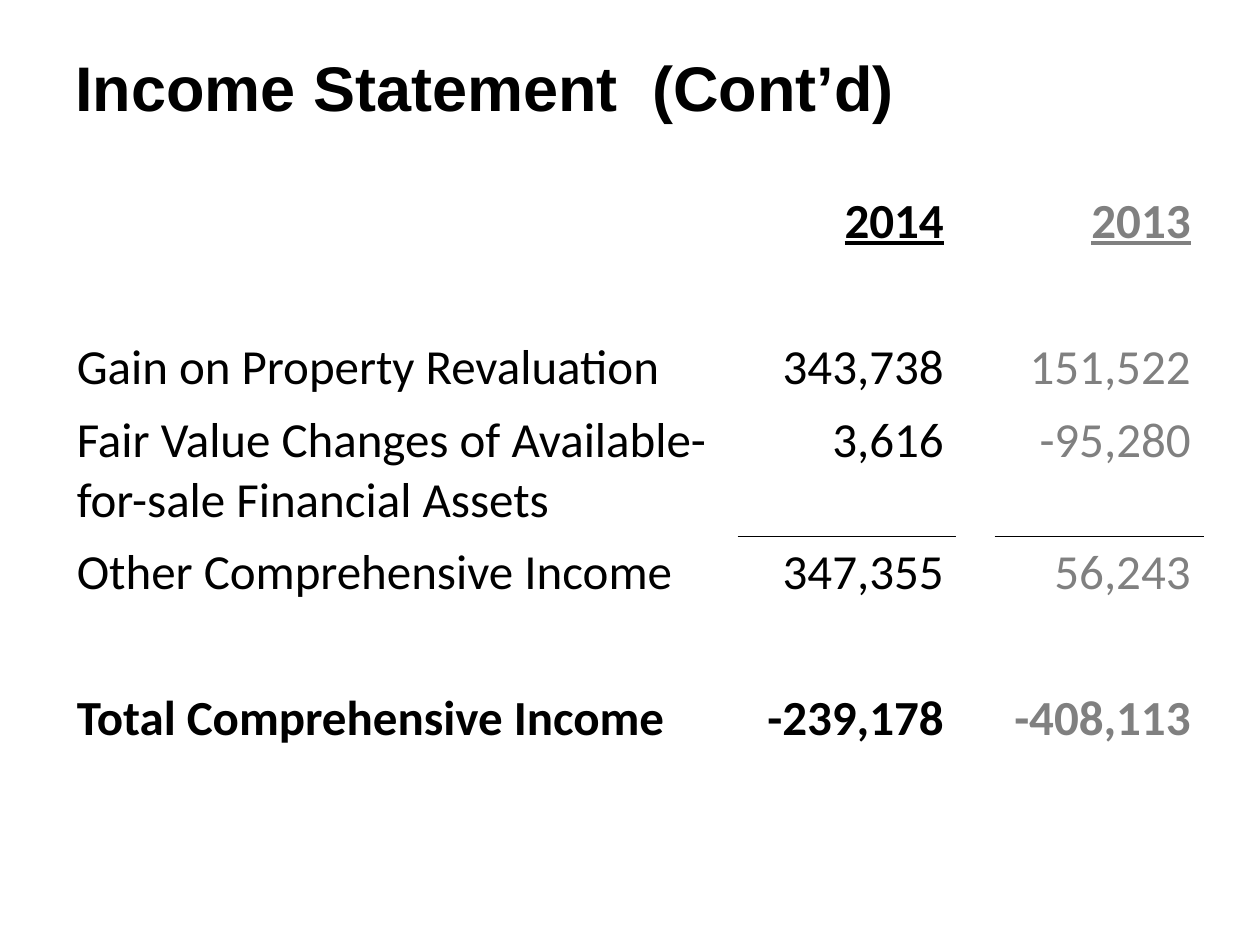
"""Build the continued income statement slide."""
import pptx
import pptx.util
import pptx.dml.color
import pptx.enum.text
import pptx.oxml
import pptx.oxml.ns

Inches = pptx.util.Inches
Pt = pptx.util.Pt

TITLE = "Income Statement  (Cont’d)"
ROWS = [
    ("", "2014", "", "2013"),
    ("", "", "", ""),
    ("Gain on Property Revaluation", "343,738", "", "151,522"),
    ("Fair Value Changes of Available-for-sale Financial Assets", "3,616", "", "-95,280"),
    ("Other Comprehensive Income", "347,355", "", "56,243"),
    ("", "", "", ""),
    ("Total Comprehensive Income", "-239,178", "", "-408,113"),
    ("", "", "", ""),
]
COLORS = {"ink": "000000", "past": "808080"}
WIDTHS = [5.35, 1.73, 0.31, 1.65]
HEIGHTS = [0.58, 0.58, 0.58, 1.05, 0.58, 0.58, 0.58, 0.4]
HEAD, LAST, TOTAL = 0, 3, 6
YEARS = (1, 3)


def style(para, face, size, color, bold):
    for run in para.runs:
        font = run.font
        font.name, font.size, font.bold = face, Pt(size), bold
        font.color.rgb = pptx.dml.color.RGBColor.from_string(COLORS[color])


def rule(cell, side):
    line = pptx.oxml.parse_xml(
        f'<a:{side} {pptx.oxml.ns.nsdecls("a")} w="{Pt(1)}"><a:solidFill>'
        f'<a:srgbClr val="{COLORS["ink"]}"/></a:solidFill></a:{side}>')
    cell._tc.get_or_add_tcPr().insert(0, line)


def add_title(slide):
    box = slide.shapes.add_textbox(Inches(0.5), Inches(0.29), Inches(9.5), Inches(0.79))
    frame = box.text_frame
    frame.word_wrap = True
    frame.vertical_anchor = pptx.enum.text.MSO_ANCHOR.MIDDLE
    frame.text = TITLE
    style(frame.paragraphs[0], "Arial", 36, "ink", True)


def add_sheet(slide):
    table = slide.shapes.add_table(
        len(ROWS), len(WIDTHS), Inches(0.51), Inches(1.47),
        Inches(sum(WIDTHS)), Inches(sum(HEIGHTS))).table
    table.first_row = table.horz_banding = False
    for col, width in zip(table.columns, WIDTHS):
        col.width = Inches(width)
    for row, height in zip(table.rows, HEIGHTS):
        row.height = Inches(height)
    for r, row in enumerate(ROWS):
        for c, text in enumerate(row):
            cell = table.cell(r, c)
            cell.fill.background()
            cell.text_frame.text = text
            para = cell.text_frame.paragraphs[0]
            style(para, "Calibri", 28, "past" if c == 3 else "ink", r in (HEAD, TOTAL))
            if c in YEARS:
                para.alignment = pptx.enum.text.PP_ALIGN.RIGHT
            if r == HEAD:
                for run in para.runs:
                    run.font.underline = True
    for c in YEARS:
        rule(table.cell(LAST, c), "lnB")
        rule(table.cell(LAST + 1, c), "lnT")


def main():
    deck = pptx.Presentation()
    deck.slide_width, deck.slide_height = Inches(10), Inches(7.5)
    slide = deck.slides.add_slide(deck.slide_layouts[6])
    add_title(slide)
    add_sheet(slide)
    deck.save("out.pptx")


if __name__ == "__main__":
    main()
